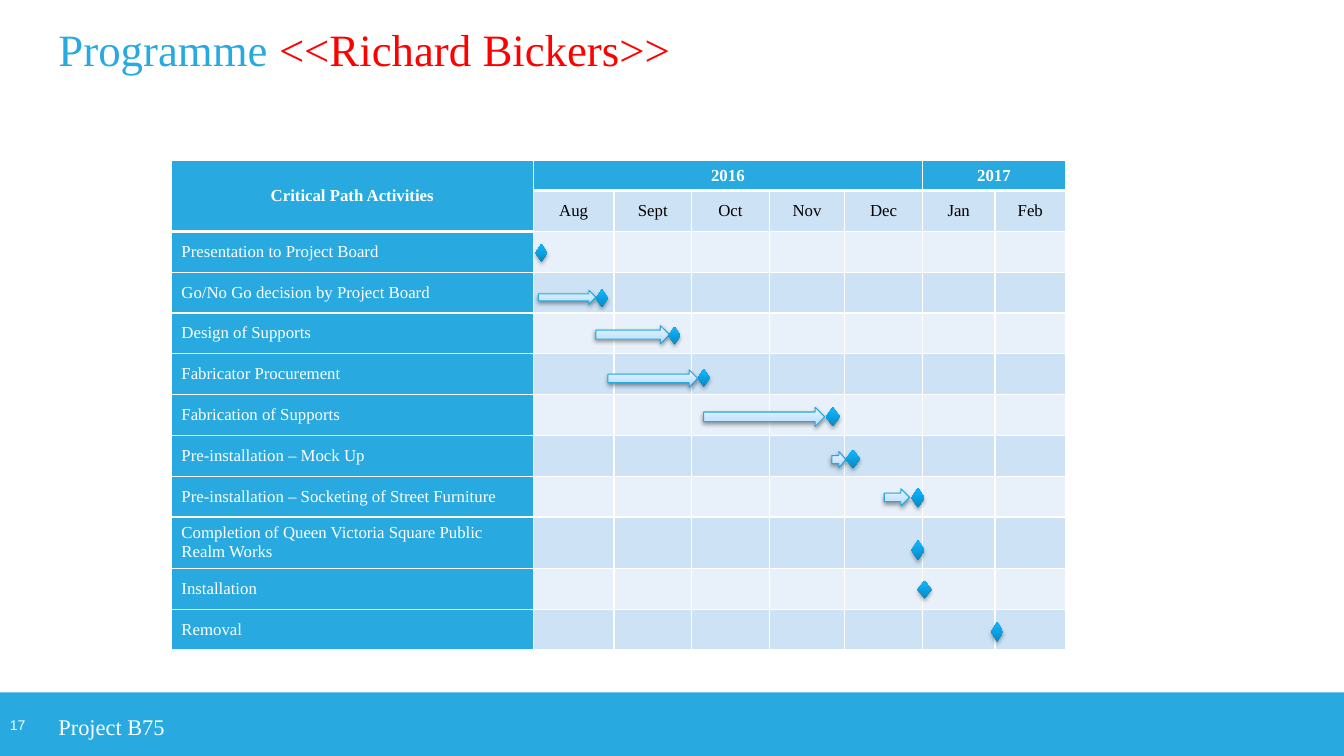
from copy import deepcopy
from lxml.etree import SubElement
from pptx import Presentation
from pptx.dml.color import RGBColor
from pptx.enum.shapes import MSO_SHAPE as Preset
from pptx.enum.text import MSO_ANCHOR as Anchor, MSO_AUTO_SIZE as AutoSize, PP_ALIGN as Align
from pptx.oxml import parse_xml
from pptx.oxml.ns import nsdecls, qn
from pptx.util import Inches, Pt

THEME = {
    "brand": "28AAE1", "white": "FFFFFF", "black": "000000", "alert": "FF0000",
    "bands": ("E8F1F9", "CDE2F4"), "outline": "23A8E1",
    "serif": "Times New Roman", "sans": "Arial",
    "title": 32, "footer": 16, "cell": 12, "number": 10,
    "milestone": ((0, "0987BD"), (0.8, "0CB0F5"), (1, "07B2FB")),
    "duration": ((0, "AFDBFF"), (0.35, "C7E5FF"), (1, "EAF5FF")),
}
WIDTH, HEIGHT = 13.33, 7.5
MARGIN = 0.58
HEADER_HEIGHT, ROW_HEIGHT, TALL_ROW = 0.3, 0.405, 0.51
COLUMNS = (3.59, 0.8, 0.77, 0.77, 0.75, 0.77, 0.72, 0.7)
MONTHS = ("Aug", "Sept", "Oct", "Nov", "Dec", "Jan", "Feb")
ACTIVITIES = (
    ("Presentation to Project Board", (5.31, 2.42, 0.12, 0.18), None),
    ("Go/No Go decision by Project Board", (5.91, 2.87, 0.12, 0.18), (5.34, 2.88, 0.57, 0.14)),
    ("Design of Supports", (6.63, 3.24, 0.12, 0.18), (5.91, 3.23, 0.73, 0.18)),
    ("Fabricator Procurement", (6.92, 3.66, 0.12, 0.18), (6.03, 3.67, 0.89, 0.17)),
    ("Fabrication of Supports", (8.19, 4.04, 0.14, 0.19), (6.98, 4.04, 1.2, 0.19)),
    ("Pre-installation – Mock Up", (8.39, 4.46, 0.14, 0.19), (8.25, 4.48, 0.14, 0.16)),
    ("Pre-installation – Socketing of Street Furniture", (9.04, 4.84, 0.13, 0.2), (8.77, 4.85, 0.25, 0.17)),
    ("Completion of Queen Victoria Square Public Realm Works", (9.04, 5.36, 0.13, 0.2), None),
    ("Installation", (9.1, 5.76, 0.14, 0.18), None),
    ("Removal", (9.83, 6.17, 0.12, 0.2), None),
)


def write(paragraph, text, size, color, font="serif", bold=False):
    run = paragraph.add_run()
    run.text = text
    formats = {"name": THEME[font], "size": Pt(THEME[size]), "bold": bold}
    for name, value in formats.items():
        setattr(run.font, name, value)
    run.font.color.rgb = RGBColor.from_string(THEME[color])


def add_marker(shapes, preset, box, stops, alpha, distance):
    shape = shapes.add_shape(preset, *map(Inches, box))
    shape.fill.gradient()
    shape.fill.gradient_angle = 90
    stop_list = shape.element.spPr.find(".//" + qn("a:gsLst"))
    stop_list.append(deepcopy(stop_list[0]))
    for stop, (position, color) in zip(shape.fill.gradient_stops, stops):
        stop.position = position
        stop.color.rgb = RGBColor.from_string(color)
    shape.line.fill.background()
    shape.shadow.inherit = False
    effects = shape.element.spPr.find(qn("a:effectLst"))
    shadow = SubElement(effects, qn("a:outerShdw"), blurRad=str(Pt(3.1)), dist=str(Pt(distance)),
                        dir="5400000", rotWithShape="0")
    tint = SubElement(shadow, qn("a:srgbClr"), val=THEME["black"])
    SubElement(tint, qn("a:alpha"), val=str(alpha * 1000))
    return shape


presentation = Presentation()
presentation.slide_width = Inches(WIDTH)
presentation.slide_height = Inches(HEIGHT)
slide = presentation.slides.add_slide(presentation.slide_layouts[1])
shapes = slide.shapes

band = shapes.add_shape(Preset.RECTANGLE, 0, Inches(6.87), Inches(WIDTH), Inches(HEIGHT - 6.87))
band.shadow.inherit = False
band.fill.solid()
band.fill.fore_color.rgb = RGBColor.from_string(THEME["brand"])
band.line.fill.background()
band.element.getparent().insert(2, band.element)

number = shapes.add_textbox(0, Inches(7.06), Inches(MARGIN), Inches(0.27))
number.text_frame.word_wrap = True
write(number.text_frame.paragraphs[0], "17", "number", "white", "sans")

title, footer = shapes.title, slide.placeholders[1]
placeholders = (
    (title, (MARGIN, 0.28, 12.04, 0.64), Anchor.TOP, 0, 34),
    (footer, (MARGIN, 6.84, 9.87, 0.66), Anchor.MIDDLE, 0.1, 18),
)
for shape, box, anchor, top_inset, spacing in placeholders:
    for name, value in zip(("left", "top", "width", "height"), box):
        setattr(shape, name, Inches(value))
    frame_formats = {
        "auto_size": AutoSize.NONE, "word_wrap": True, "vertical_anchor": anchor,
        "margin_left": 0, "margin_right": 0, "margin_bottom": 0, "margin_top": Inches(top_inset),
    }
    for name, value in frame_formats.items():
        setattr(shape.text_frame, name, value)
    paragraph_formats = {"alignment": Align.LEFT, "line_spacing": Pt(spacing), "space_before": Pt(0)}
    for name, value in paragraph_formats.items():
        setattr(shape.text_frame.paragraphs[0], name, value)

write(title.text_frame.paragraphs[0], "Programme ", "title", "brand")
write(title.text_frame.paragraphs[0], "<<Richard Bickers>>", "title", "alert")
footer_paragraph = footer.text_frame.paragraphs[0]
write(footer_paragraph, "Project B75", "footer", "white")
footer_properties = footer_paragraph._p.get_or_add_pPr()
footer_properties.set("marL", "0")
footer_properties.set("indent", "0")
SubElement(footer_properties, qn("a:buNone"))

rows = [
    ["Critical Path Activities", "2016", "", "", "", "", "2017", ""],
    ["", *MONTHS],
    *[[label] + [""] * len(MONTHS) for label, milestone, duration in ACTIVITIES],
]
heights = [HEADER_HEIGHT] + [ROW_HEIGHT] * (len(rows) - 1)
heights[9] = TALL_ROW
table = shapes.add_table(len(rows), len(COLUMNS), Inches(1.7), Inches(1.59),
                         Inches(sum(COLUMNS)), Inches(sum(heights))).table
table.first_row = table.horz_banding = False
for column, width in zip(table.columns, COLUMNS):
    column.width = Inches(width)
for row, height in zip(table.rows, heights):
    row.height = Inches(height)
for first, last in (((0, 0), (1, 0)), ((0, 1), (0, 5)), ((0, 6), (0, 7))):
    table.cell(*first).merge(table.cell(*last))

for row_index, texts in enumerate(rows):
    for column_index, text in enumerate(texts):
        cell = table.cell(row_index, column_index)
        header_rows = 2 if column_index == 0 else 1
        is_header = row_index < header_rows
        is_branded = is_header or column_index == 0
        cell.vertical_anchor = Anchor.MIDDLE
        cell.fill.solid()
        fill = THEME["brand"] if is_branded else THEME["bands"][row_index % 2]
        cell.fill.fore_color.rgb = RGBColor.from_string(fill)
        borders = {"L": 1, "R": 1, "T": 3 if row_index == header_rows else 1, "B": 3 if is_header else 1}
        for position, (side, points) in enumerate(borders.items()):
            border = parse_xml(
                f'<a:ln{side} {nsdecls("a")} w="{Pt(points)}"><a:solidFill>'
                f'<a:srgbClr val="{THEME["white"]}"/></a:solidFill></a:ln{side}>')
            cell._tc.get_or_add_tcPr().insert(position, border)
        if text:
            paragraph = cell.text_frame.paragraphs[0]
            paragraph.alignment = Align.CENTER if row_index < 2 else Align.LEFT
            write(paragraph, text, "cell", "white" if is_branded else "black", bold=is_header)

for label, milestone, duration in ACTIVITIES:
    if duration:
        arrow = add_marker(shapes, Preset.RIGHT_ARROW, duration, THEME["duration"], 38, 1.6)
        arrow.line.color.rgb = RGBColor.from_string(THEME["outline"])
        arrow.line.width = Pt(0.75)
    add_marker(shapes, Preset.DIAMOND, milestone, THEME["milestone"], 35, 1.8)

presentation.save("out.pptx")
